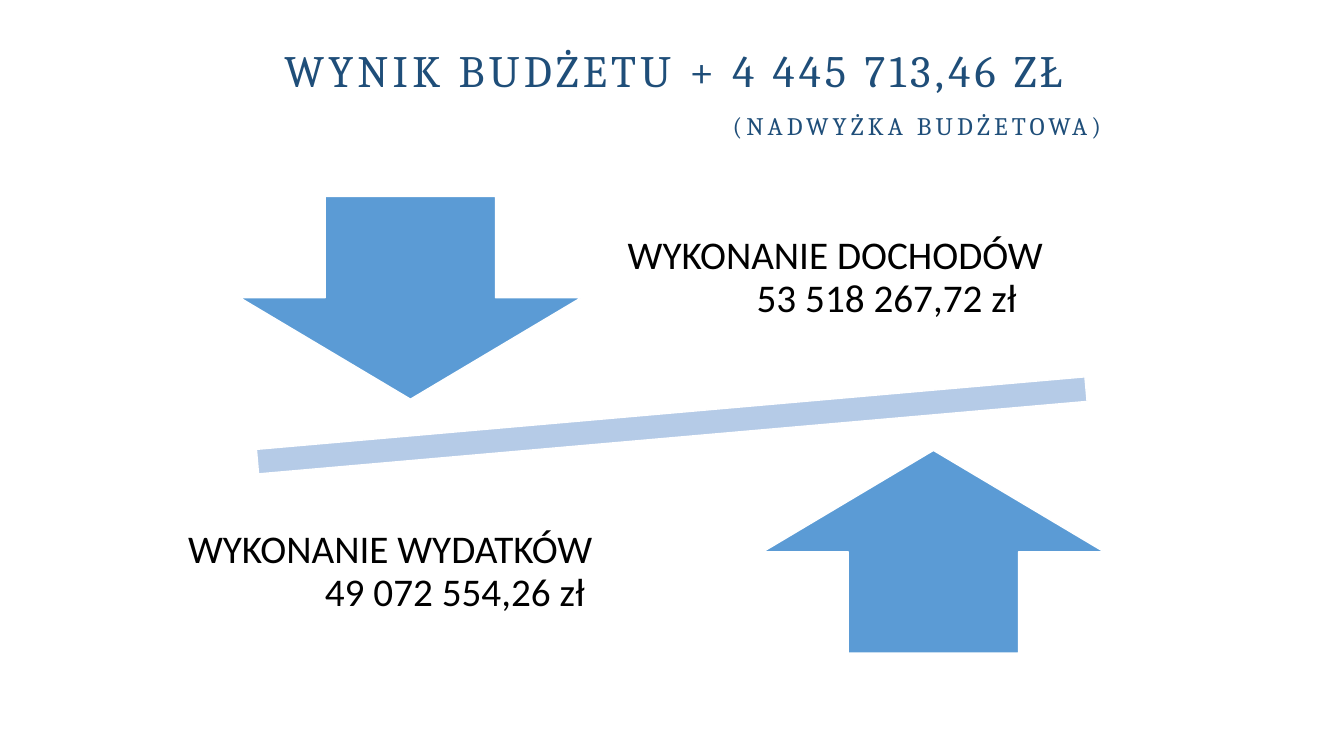
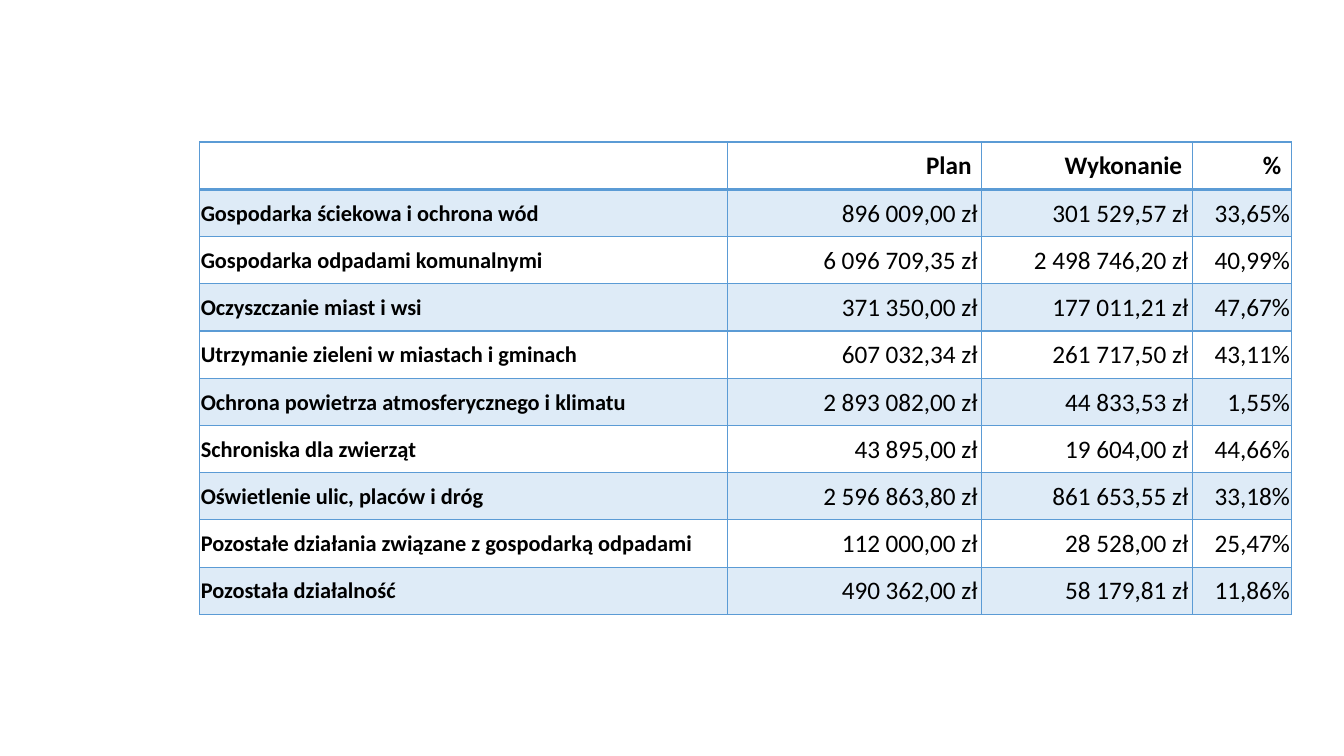
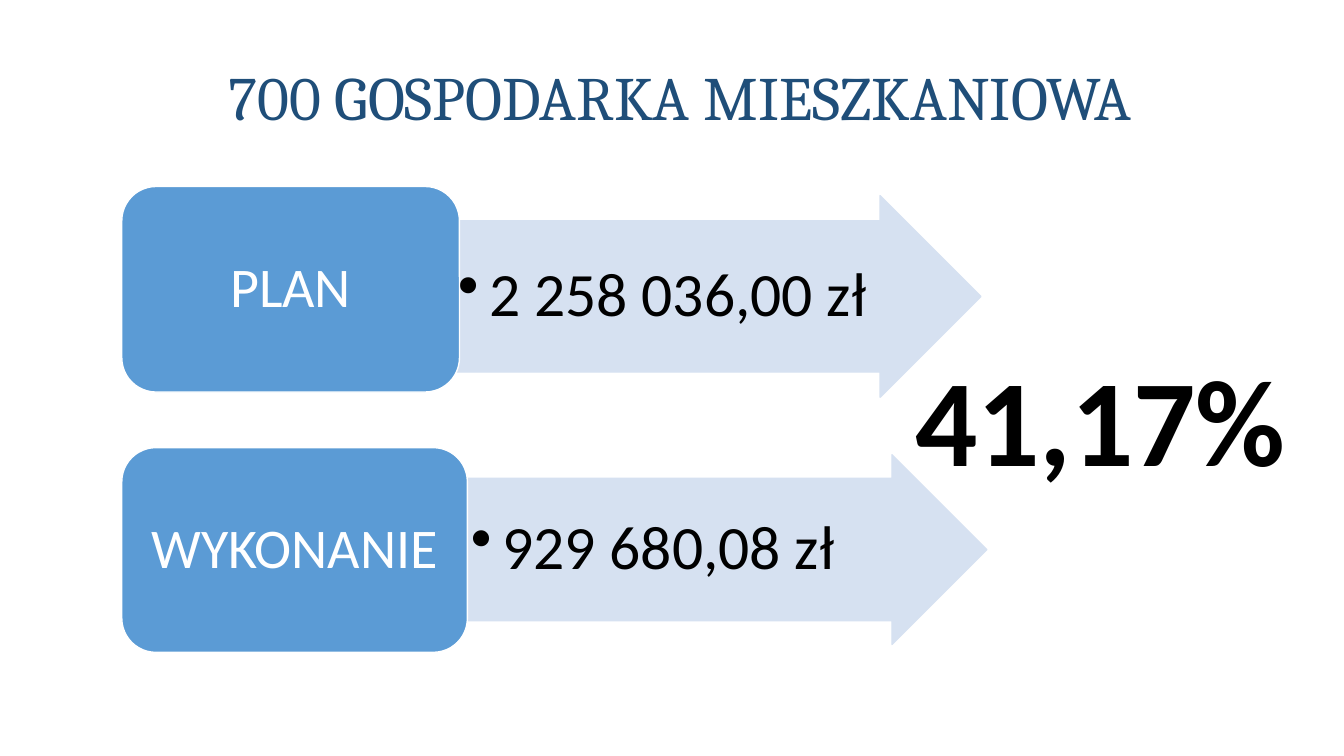
from lxml import etree
from pptx import Presentation
from pptx.dml.color import RGBColor
from pptx.enum.shapes import MSO_SHAPE as Preset
from pptx.enum.text import MSO_ANCHOR as Anchor, MSO_AUTO_SIZE as AutoSize, PP_ALIGN as Align
from pptx.oxml.ns import qn
from pptx.util import Cm, Pt

NAVY = RGBColor(0x1F, 0x4E, 0x79)
BLUE = RGBColor(0x5B, 0x9B, 0xD5)
BAR_BLUE = RGBColor(0xB5, 0xCB, 0xE7)
ARROW_BLUE = RGBColor(0xD6, 0xE1, 0xF1)
BAND_BLUE = RGBColor(0xDE, 0xEB, 0xF7)
BLACK = RGBColor(0, 0, 0)
WHITE = RGBColor(0xFF, 0xFF, 0xFF)
TITLE_FONT = "Cambria"
BODY_FONT = "Calibri"


def add_text(paragraph, text, size, color=BLACK, font=BODY_FONT, bold=False):
    run = paragraph.add_run()
    run.text = text
    run.font.size = Pt(size)
    run.font.name = font
    run.font.bold = bold
    run.font.color.rgb = color
    return run


def add_block(slide, box, preset=None, fill=None, line=WHITE):
    """Add a filled preset shape, or a text box when no preset is given."""
    position = [Cm(length) for length in box]
    if preset is None:
        shape = slide.shapes.add_textbox(*position)
    else:
        shape = slide.shapes.add_shape(preset, *position)
        shape.shadow.inherit = False
        shape.fill.solid()
        shape.fill.fore_color.rgb = fill
        shape.line.color.rgb = line
        shape.line.width = Pt(1)
    frame = shape.text_frame
    frame.word_wrap = True
    frame.vertical_anchor = Anchor.MIDDLE
    frame.margin_left = frame.margin_right = 0
    return shape


presentation = Presentation()
presentation.slide_width, presentation.slide_height = Cm(33.87), Cm(19.05)
layouts = presentation.slide_layouts
title_layout, blank_layout = layouts[5], layouts[6]
result_slide, table_slide, housing_slide = [
    presentation.slides.add_slide(layout)
    for layout in (title_layout, blank_layout, title_layout)
]

# Titles: each line is text, size, letter spacing, indent, space before
titles = [
    (result_slide, (6.91, 0.55, 26.5, 3.68), [
        ("WYNIK BUDŻETU + 4 445 713,46 ZŁ", 32, 3, 0, 0),
        ("(NADWYŻKA BUDŻETOWA)", 18, 3, 11.3, 12),
    ]),
    (housing_slide, (5.51, 0.69, 28.3, 3.68), [
        ("700 GOSPODARKA MIESZKANIOWA", 44, 0, 0, 0),
    ]),
]
for slide, box, lines in titles:
    title = slide.shapes.title
    title.left, title.top, title.width, title.height = [Cm(length) for length in box]
    frame = title.text_frame
    frame.auto_size = AutoSize.NONE
    frame.vertical_anchor = Anchor.MIDDLE
    for index, (text, size, spacing, indent, before) in enumerate(lines):
        paragraph = frame.add_paragraph() if index else frame.paragraphs[0]
        paragraph.alignment = Align.LEFT
        paragraph.line_spacing = 0.9
        paragraph.space_before = Pt(before)
        paragraph._p.get_or_add_pPr().set("marL", str(Cm(indent)))
        run = add_text(paragraph, text, size, NAVY, TITLE_FONT)
        run._r.get_or_add_rPr().set("spc", str(spacing * 100))

# Slide 1: balance bar with an arrow on each side
bar = add_block(result_slide, (2.67, 9.4, 28.52, 2.64), Preset.MATH_MINUS, BAR_BLUE)
bar.rotation = 355
for preset, left, top in [(Preset.DOWN_ARROW, 6.05, 4.95), (Preset.UP_ARROW, 19.23, 11.35)]:
    add_block(result_slide, (left, top, 8.59, 5.11), preset, BLUE)

amounts = [
    (15.82, 4.32, "WYKONANIE DOCHODÓW", "53 518 267,72 zł", 3.25),
    (4.74, 11.73, "WYKONANIE WYDATKÓW", "49 072 554,26 zł", 3.45),
]
for left, top, label, amount, indent in amounts:
    frame = add_block(result_slide, (left, top, 13, 5.38)).text_frame
    for paragraph, text, margin in [
        (frame.paragraphs[0], label, 0),
        (frame.add_paragraph(), amount, indent),
    ]:
        paragraph.line_spacing = 0.9
        paragraph._p.get_or_add_pPr().set("marL", str(Cm(margin)))
        add_text(paragraph, text, 28)

# Slide 2: plan and execution table
rows = [
    ("", "Plan", "Wykonanie", "%"),
    ("Gospodarka ściekowa i ochrona wód", "896 009,00 zł", "301 529,57 zł", "33,65%"),
    ("Gospodarka odpadami komunalnymi", "6 096 709,35 zł", "2 498 746,20 zł", "40,99%"),
    ("Oczyszczanie miast i wsi", "371 350,00 zł", "177 011,21 zł", "47,67%"),
    ("Utrzymanie zieleni w miastach i gminach", "607 032,34 zł", "261 717,50 zł", "43,11%"),
    ("Ochrona powietrza atmosferycznego i klimatu", "2 893 082,00 zł", "44 833,53 zł", "1,55%"),
    ("Schroniska dla zwierząt", "43 895,00 zł", "19 604,00 zł", "44,66%"),
    ("Oświetlenie ulic, placów i dróg", "2 596 863,80 zł", "861 653,55 zł", "33,18%"),
    ("Pozostałe działania związane z gospodarką odpadami", "112 000,00 zł", "28 528,00 zł", "25,47%"),
    ("Pozostała działalność", "490 362,00 zł", "58 179,81 zł", "11,86%"),
]
column_widths = [13.31, 6.4, 5.31, 2.49]
row_height = 1.19
table = table_slide.shapes.add_table(
    len(rows), len(column_widths), Cm(5.03), Cm(3.58),
    Cm(sum(column_widths)), Cm(row_height * len(rows)),
).table
for column, width in zip(table.columns, column_widths):
    column.width = Cm(width)

for row_index, values in enumerate(rows):
    table.rows[row_index].height = Cm(row_height)
    is_header = row_index == 0
    for column_index, value in enumerate(values):
        cell = table.cell(row_index, column_index)
        is_label = column_index == 0
        cell.vertical_anchor = Anchor.MIDDLE
        if not is_header:
            cell.margin_left = cell.margin_top = Cm(0.03)
            cell.margin_right = Cm(0.1 if column_index in (1, 2) else 0.03)
            cell.margin_bottom = 0
        # Borders come before the fill in the cell properties
        properties = cell._tc.get_or_add_tcPr()
        for side in ("lnL", "lnR", "lnT", "lnB"):
            is_thick = (side == "lnB" and is_header) or (side == "lnT" and row_index == 1)
            border = etree.SubElement(
                properties, qn(f"a:{side}"), w=str(Pt(2 if is_thick else 1)))
            border_fill = etree.SubElement(border, qn("a:solidFill"))
            etree.SubElement(border_fill, qn("a:srgbClr"), val=str(BLUE))
        cell.fill.solid()
        cell.fill.fore_color.rgb = BAND_BLUE if row_index % 2 else WHITE
        if value:
            paragraph = cell.text_frame.paragraphs[0]
            paragraph.alignment = Align.LEFT if is_label else Align.RIGHT
            add_text(paragraph, value, 16 if is_label else 18, bold=is_header or is_label)

# Slide 3: labelled arrows
steps = [
    ("PLAN", (3.07, 4.7, 8.51, 5.18), "2 258 036,00 zł", (11.46, 4.93, 13.26, 5.08)),
    ("WYKONANIE", (3.07, 11.28, 8.71, 5.16), "929 680,08 zł", (11.79, 11.46, 13.08, 4.78)),
]
for label, label_box, amount, arrow_box in steps:
    arrow = add_block(housing_slide, arrow_box, Preset.RIGHT_ARROW, ARROW_BLUE, ARROW_BLUE)
    arrow.adjustments[0], arrow.adjustments[1] = 0.75, 0.5
    arrow.text_frame.margin_left = Cm(0.08)
    paragraph = arrow.text_frame.paragraphs[0]
    paragraph.alignment = Align.LEFT
    paragraph.line_spacing = 0.9
    properties = paragraph._p.get_or_add_pPr()
    properties.set("marL", str(Cm(0.79)))
    properties.set("indent", str(-Cm(0.79)))
    etree.SubElement(properties, qn("a:buChar"), char="•")
    add_text(paragraph, amount, 44)

    card = add_block(housing_slide, label_box, Preset.ROUNDED_RECTANGLE, BLUE)
    paragraph = card.text_frame.paragraphs[0]
    paragraph.alignment = Align.CENTER
    paragraph.line_spacing = 0.9
    add_text(paragraph, label, 40, WHITE)

# Slide 3: share of the plan carried out
share = add_block(housing_slide, (23.06, 8.51, 10.3, 4.01))
add_text(share.text_frame.paragraphs[0], "41,17%", 88, bold=True)

presentation.save("out.pptx")
